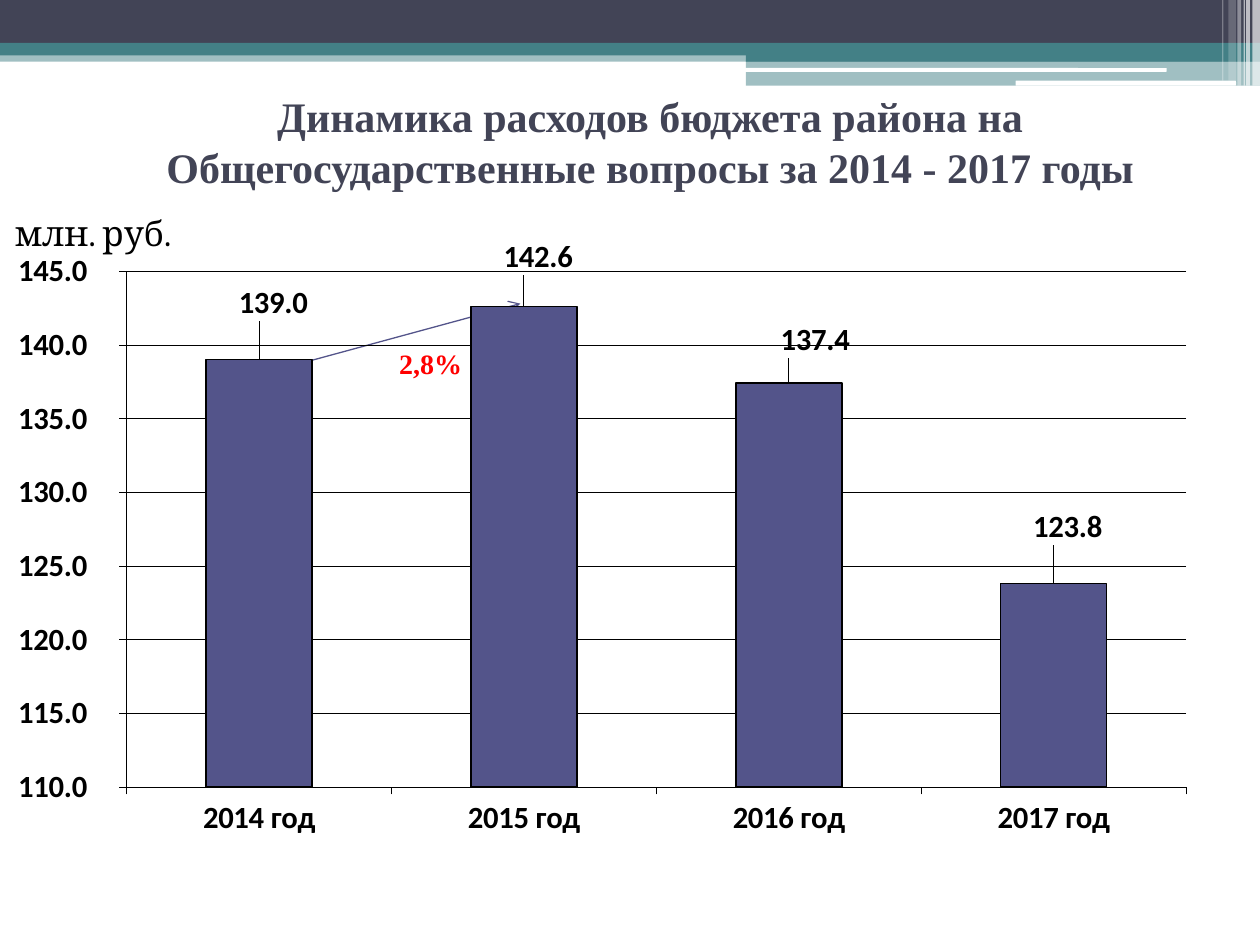
import lxml.etree
import pptx
import pptx.chart.data
import pptx.dml.color
import pptx.enum.chart
import pptx.enum.shapes
import pptx.enum.text
import pptx.oxml
import pptx.oxml.ns
import pptx.util

RGB = pptx.dml.color.RGBColor
SLATE = RGB(0x42, 0x44, 0x56)
TEAL = RGB(0x43, 0x80, 0x86)
INDIGO = RGB(0x53, 0x54, 0x8A)
WHITE = RGB(0xFF, 0xFF, 0xFF)
BLACK = RGB(0, 0, 0)
RED = RGB(0xFF, 0, 0)

SHAPE = pptx.enum.shapes.MSO_SHAPE
ALIGN = pptx.enum.text.PP_ALIGN
ANCHOR = pptx.enum.text.MSO_ANCHOR
TICK = pptx.enum.chart.XL_TICK_MARK
NUMBER_FORMAT = r"_-* #,##0.0_р_._-;\-* #,##0.0_р_._-"
EXPENSES = {"2014 год": 139.0, "2015 год": 142.6, "2016 год": 137.4, "2017 год": 123.8}
LABEL_SHIFTS = [(0.02, -0.05), (0.02, -0.04), (0.03, -0.03), (0.02, -0.05)]
STRIPES = [
    (99.4, 0.6, 6.8, 65), (98.9, 0.3, 6.8, 65), (98.7, 0.1, 6.8, 60),
    (98.2, 0.3, 6.8, 40), (97.5, 0.6, 6.4, 20), (97, 0.1, 6.4, 30),
]


def child(parent, tag, index=None, **attributes):
    element = pptx.oxml.parse_xml(f"<{tag} {pptx.oxml.ns.nsdecls(tag.split(':')[0])}/>")
    for key, value in attributes.items():
        element.set(key, str(value))
    parent.insert(len(parent) if index is None else index, element)
    return element


def style_font(font, size, color=BLACK, name="Calibri", bold=True):
    font.size, font.name, font.bold = pptx.util.Pt(size), name, bold
    font.color.rgb = color


def style_line(line, color, width):
    line.color.rgb = color
    line.width = pptx.util.Pt(width)


def write(frame, text, align=ALIGN.LEFT, anchor=ANCHOR.TOP, wrap=True, **font):
    frame.word_wrap, frame.vertical_anchor = wrap, anchor
    if not wrap:
        frame.auto_size = pptx.enum.text.MSO_AUTO_SIZE.SHAPE_TO_FIT_TEXT
    paragraph = frame.paragraphs[0]
    paragraph.text, paragraph.alignment = text, align
    for run in paragraph.runs:
        style_font(run.font, **font)


class Board:
    """Slide on a grid of 100 columns by 75 rows."""

    def __init__(self, deck):
        self.slide = deck.slides.add_slide(deck.slide_layouts[6])
        self.shapes = self.slide.shapes
        self.column = deck.slide_width / 100
        self.row = deck.slide_height / 75

    def cells(self, *lengths):
        return [round(n * (self.row if i % 2 else self.column)) for i, n in enumerate(lengths)]

    def band(self, x, y, w, h, color, opacity=100, kind=SHAPE.RECTANGLE):
        band = self.shapes.add_shape(kind, *self.cells(x, y, w, h))
        band.shadow.inherit = False
        band.line.fill.background()
        band.fill.solid()
        band.fill.fore_color.rgb = color
        if opacity < 100:
            tint = band.fill._xPr.find(".//" + pptx.oxml.ns.qn("a:srgbClr"))
            child(tint, "a:alpha", val=opacity * 1000)

    def text(self, x, y, w, h, words, **form):
        write(self.shapes.add_textbox(*self.cells(x, y, w, h)).text_frame, words, **form)

    def arrow(self, x1, y1, x2, y2, color, width):
        arrow = self.shapes.add_connector(
            pptx.enum.shapes.MSO_CONNECTOR.STRAIGHT, *self.cells(x1, y1, x2, y2))
        style_line(arrow.line, color, width)
        child(arrow.line._get_or_add_ln(), "a:tailEnd", type="arrow")
        child(arrow._element.spPr, "a:effectLst")

    def columns(self, x, y, w, h, values, shifts):
        data = pptx.chart.data.CategoryChartData()
        data.categories = list(values)
        data.add_series("Series 1", list(values.values()))
        chart = self.shapes.add_chart(
            pptx.enum.chart.XL_CHART_TYPE.COLUMN_CLUSTERED, *self.cells(x, y, w, h), data).chart
        chart.has_legend = chart.has_title = False
        style_font(chart.font, 18)
        background = child(chart._chartSpace, "c:spPr")
        chart._chartSpace.chart.addnext(background)
        child(background, "a:noFill")
        child(child(background, "a:ln"), "a:noFill")
        self.place_plot(chart)
        self.style_axes(chart)
        plot = chart.plots[0]
        plot.vary_by_categories, plot.gap_width = False, 150
        series = plot.series[0]
        series.format.fill.solid()
        series.format.fill.fore_color.rgb = INDIGO
        style_line(series.format.line, BLACK, 1)
        self.label_columns(series, shifts)

    def place_plot(self, chart):
        area = chart._chartSpace.chart.plotArea
        for old in area.findall(pptx.oxml.ns.qn("c:layout")):
            area.remove(old)
        manual = child(child(area, "c:layout", 0), "c:manualLayout")
        child(manual, "c:layoutTarget", val="inner")
        for side in ("xMode", "yMode"):
            child(manual, f"c:{side}", val="edge")
        for side, share in zip("xywh", (0.09, 0.09, 0.87, 0.78)):
            child(manual, f"c:{side}", val=share)

    def style_axes(self, chart):
        years, amounts = chart.category_axis, chart.value_axis
        for axis in (years, amounts):
            style_font(axis.tick_labels.font, 17.6)
            style_line(axis.format.line, BLACK, 0.25)
            axis.major_tick_mark, axis.minor_tick_mark = TICK.OUTSIDE, TICK.NONE
        years.tick_label_position = pptx.enum.chart.XL_TICK_LABEL_POSITION.LOW
        amounts.minimum_scale, amounts.maximum_scale, amounts.major_unit = 110, 145, 5
        amounts.tick_labels.number_format = NUMBER_FORMAT
        amounts.tick_labels.number_format_is_linked = False
        style_line(amounts.major_gridlines.format.line, BLACK, 0.25)

    def label_columns(self, series, shifts):
        labels = series.data_labels
        labels.show_value = True
        labels.number_format, labels.number_format_is_linked = NUMBER_FORMAT, False
        style_font(labels.font, 17.6)
        for index, shift in enumerate(shifts):
            label = series.points[index].data_label
            style_font(label.font, 17.6)
            label.position = pptx.enum.chart.XL_LABEL_POSITION.OUTSIDE_END
            element = label._dLbl
            manual = child(child(element, "c:layout", 1), "c:manualLayout")
            for side, share in zip("xy", shift):
                child(manual, f"c:{side}", val=share)
            child(element, "c:numFmt", 2, formatCode=NUMBER_FORMAT, sourceLinked=0)


def main():
    deck = pptx.Presentation()
    deck.slide_width, deck.slide_height = pptx.util.Inches(10), pptx.util.Inches(7.5)
    board = Board(deck)
    board.band(0, 4, 100, 0.9, TEAL, 50)
    board.band(0, 0, 100, 3.4, SLATE)
    board.band(0, 3.4, 100, 1, TEAL)
    board.band(59.2, 3.9, 40.8, 1, TEAL)
    board.band(59.2, 4.8, 40.8, 2, TEAL, 50)
    board.band(59.1, 5.4, 33.5, 0.3, WHITE, kind=SHAPE.ROUNDED_RECTANGLE)
    board.band(80.6, 6.4, 17.5, 0.4, WHITE, kind=SHAPE.ROUNDED_RECTANGLE)
    for left, width, height, opacity in STRIPES:
        board.band(left, 0, width, height, WHITE, opacity)
    board.text(
        6.6, 6.7, 90, 9,
        "Динамика расходов бюджета района на\vОбщегосударственные вопросы за 2014 - 2017 годы",
        align=ALIGN.CENTER, anchor=ANCHOR.MIDDLE, size=24, color=SLATE, name="Times New Roman")
    board.arrow(24, 28.8, 41.3, 24.1, INDIGO, 0.75)
    board.columns(0.9, 16.8, 97.1, 52.5, EXPENSES, LABEL_SHIFTS)
    board.text(0.2, 16.1, 17.8, 4.7, "млн. руб.", anchor=ANCHOR.MIDDLE,
               size=20, name="Cambria", bold=False)
    board.text(30.7, 27, 7.1, 3.7, "2,8%", wrap=False, size=16, color=RED, name="Times New Roman")
    deck.save("out.pptx")


if __name__ == "__main__":
    main()
